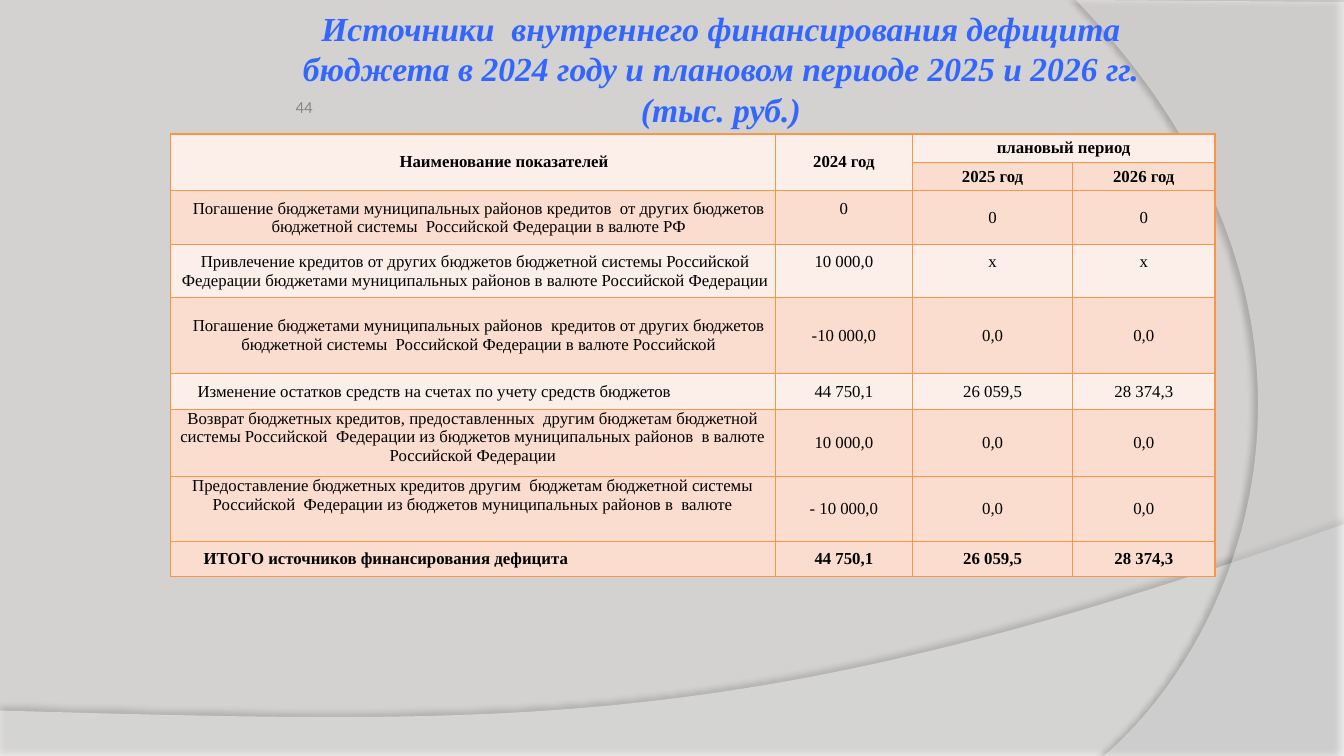
from dataclasses import dataclass
from typing import Optional

from lxml import etree
from pptx import Presentation
from pptx import util as u
from pptx.dml.color import RGBColor
from pptx.enum import text
from pptx.oxml import ns

BACKGROUND = RGBColor(0xD4, 0xD2, 0xD0)
WHITE = RGBColor(0xFF, 0xFF, 0xFF)
BLACK = RGBColor(0, 0, 0)
TITLE_BLUE = RGBColor(0x33, 0x66, 0xFF)
NUMBER_GRAY = RGBColor(0x88, 0x88, 0x88)
LIGHT = RGBColor(0xFC, 0xEE, 0xE9)
DARK = RGBColor(0xFB, 0xDD, 0xCF)
BORDER = RGBColor(0xF7, 0x96, 0x46)
SERIF = "Times New Roman"
CENTER = text.PP_ALIGN.CENTER
MIDDLE = text.MSO_ANCHOR.MIDDLE
CURVE_STEPS = 60

Point = tuple[float, float]


@dataclass
class Wave:
    corners: list[Point]
    curve: tuple[Point, Point, Point, Point]
    opacity: int
    shadow_opacity: int
    shadow_distance: float
    shadow_angle: int


@dataclass
class Row:
    height: float
    values: tuple[str, ...]
    fill: RGBColor
    bold: bool = False
    indent: tuple[float, float] = (0, 0)
    name_align: text.PP_ALIGN = CENTER
    name_anchor: text.MSO_ANCHOR = MIDDLE
    raised: tuple[int, ...] = ()  # columns whose text sits above the middle


WAVES = [
    Wave([(0, 7.5), (13.33, 7.5)],
         ((13.33, 5.2), (7.45, 7.29), (5.21, 7.19), (0, 7.05)), 45, 35, 3.5, 270),
    Wave([(13.33, 0.02), (13.33, 7.5)],
         ((10.95, 7.5), (12.46, 6.19), (13.57, 3), (10.67, 0)), 40, 45, 4, 180),
]
COLUMNS = (6, 1.36, 1.59, 1.41)
ROWS = [
    Row(0.28, ("Наименование показателей", "2024 год", "плановый период", ""),
        LIGHT, bold=True, indent=(0.62, 0)),
    Row(0.28, ("", "", "2025 год", "2026 год"), DARK, bold=True),
    Row(0.54, ("Погашение бюджетами муниципальных районов кредитов  от других бюджетов "
               "бюджетной системы  Российской Федерации в валюте РФ", "0", "0", "0"),
        DARK, indent=(0.12, 0), raised=(1,)),
    Row(0.52, ("Привлечение кредитов от других бюджетов бюджетной системы Российской "
               "Федерации бюджетами муниципальных районов в валюте Российской Федерации",
               "10 000,0", "х", "х"), LIGHT, indent=(0.05, 0), raised=(1, 2, 3)),
    Row(0.76, ("Погашение бюджетами муниципальных районов  кредитов от других бюджетов "
               "бюджетной системы  Российской Федерации в валюте Российской",
               "-10 000,0", "0,0", "0,0"), DARK, indent=(0.12, 0)),
    Row(0.35, ("Изменение остатков средств на счетах по учету средств бюджетов",
               "44 750,1", "26 059,5", "28 374,3"),
        LIGHT, indent=(0.67, -0.4), name_align=text.PP_ALIGN.LEFT),
    Row(0.67, ("Возврат бюджетных кредитов, предоставленных  другим бюджетам бюджетной "
               "системы Российской  Федерации из бюджетов муниципальных районов  в валюте "
               "Российской Федерации", "10 000,0", "0,0", "0,0"),
        DARK, name_anchor=text.MSO_ANCHOR.TOP),
    Row(0.64, ("Предоставление бюджетных кредитов другим  бюджетам бюджетной системы "
               "Российской  Федерации из бюджетов муниципальных районов в  валюте",
               "- 10 000,0", "0,0", "0,0"), DARK, name_anchor=text.MSO_ANCHOR.TOP),
    Row(0.35, ("ИТОГО источников финансирования дефицита",
               "44 750,1", "26 059,5", "28 374,3"),
        DARK, bold=True, indent=(1.27, -0.94), name_align=text.PP_ALIGN.LEFT),
]


def add_element(parent, tag: str, **attributes):
    element = etree.SubElement(parent, ns.qn(tag))
    for name, value in attributes.items():
        element.set(name, str(value))
    return element


def bezier(curve: tuple[Point, Point, Point, Point]) -> list[Point]:
    def at(t: float) -> Point:
        weights = ((1 - t) ** 3, 3 * t * (1 - t) ** 2, 3 * t ** 2 * (1 - t), t ** 3)
        return (sum(w * p[0] for w, p in zip(weights, curve)),
                sum(w * p[1] for w, p in zip(weights, curve)))
    return [at(step / CURVE_STEPS) for step in range(CURVE_STEPS + 1)]


def add_wave(slide, wave: Wave) -> None:
    points = [(u.Inches(x), u.Inches(y)) for x, y in wave.corners + bezier(wave.curve)]
    builder = slide.shapes.build_freeform(*points[0])
    builder.add_line_segments(points[1:], close=True)
    shape = builder.convert_to_shape()
    shape.fill.solid()
    shape.fill.fore_color.rgb = WHITE
    shape.line.fill.background()
    shape.shadow.inherit = False
    properties = shape._element.spPr
    color = properties.find(ns.qn("a:solidFill"))[0]
    add_element(color, "a:alpha", val=wave.opacity * 1000)
    shadow = add_element(properties.find(ns.qn("a:effectLst")), "a:outerShdw",
                         blurRad=u.Pt(4), dist=u.Pt(wave.shadow_distance),
                         dir=wave.shadow_angle * 60000, algn="ctr", rotWithShape=0)
    shadow_color = add_element(shadow, "a:srgbClr", val=BLACK)
    add_element(shadow_color, "a:alpha", val=wave.shadow_opacity * 1000)


def write(frame, words: str, size: float, color: RGBColor, font: str = SERIF,
          align: text.PP_ALIGN = CENTER, bold: bool = False, italic: bool = False,
          indent: tuple[float, float] = (0, 0)) -> None:
    frame.text = words
    paragraph = frame.paragraphs[0]
    paragraph.alignment = align
    properties = paragraph._p.get_or_add_pPr()
    properties.set("marL", str(u.Inches(indent[0])))
    properties.set("indent", str(u.Inches(indent[1])))
    for run in paragraph.runs:
        run.font.name, run.font.size = font, u.Pt(size)
        run.font.bold, run.font.italic = bold, italic
        run.font.color.rgb = color


def add_label(slide, left: float, top: float, width: float, height: float,
              margin: Optional[float] = None):
    box = slide.shapes.add_textbox(*map(u.Inches, (left, top, width, height)))
    frame = box.text_frame
    frame.word_wrap = True
    if margin is not None:
        frame.margin_left = frame.margin_right = u.Inches(margin)
        frame.margin_top = frame.margin_bottom = u.Inches(margin)
    return frame


def format_cell(cell, row: Row, column: int) -> None:
    is_name = column == 0
    cell.margin_left = cell.margin_right = cell.margin_top = 0
    cell.margin_bottom = u.Inches(0.18 if column in row.raised else 0)
    cell.vertical_anchor = row.name_anchor if is_name else MIDDLE
    if row.values[column]:
        write(cell.text_frame, row.values[column], 12, BLACK, bold=row.bold,
              align=row.name_align if is_name else CENTER,
              indent=row.indent if is_name else (0, 0))
    properties = cell._tc.get_or_add_tcPr()
    for side in ("a:lnL", "a:lnR", "a:lnT", "a:lnB"):
        line = add_element(properties, side, w=u.Pt(1))
        add_element(add_element(line, "a:solidFill"), "a:srgbClr", val=BORDER)
    cell.fill.solid()
    cell.fill.fore_color.rgb = row.fill


def add_deficit_table(slide) -> None:
    frame = slide.shapes.add_table(
        len(ROWS), len(COLUMNS), u.Inches(1.69), u.Inches(1.33),
        u.Inches(sum(COLUMNS)), u.Inches(sum(row.height for row in ROWS)))
    table = frame.table
    table.first_row = table.horz_banding = False
    for column, width in zip(table.columns, COLUMNS):
        column.width = u.Inches(width)
    for index, row in enumerate(ROWS):
        table.rows[index].height = u.Inches(row.height)
        for column in range(len(COLUMNS)):
            format_cell(table.cell(index, column), row, column)
    for first, last in (((0, 0), (1, 0)), ((0, 1), (1, 1)), ((0, 2), (0, 3))):
        table.cell(*first).merge(table.cell(*last))


def main() -> None:
    presentation = Presentation()
    presentation.slide_width, presentation.slide_height = u.Inches(13.33), u.Inches(7.5)
    slide = presentation.slides.add_slide(presentation.slide_layouts[6])
    slide.background.fill.solid()
    slide.background.fill.fore_color.rgb = BACKGROUND
    for wave in WAVES:
        add_wave(slide, wave)
    number = add_label(slide, 2.25, 0.96, 0.85, 0.2, margin=0)
    number.vertical_anchor = MIDDLE
    write(number, "44", 12, NUMBER_GRAY, font="Calibri", align=text.PP_ALIGN.RIGHT,
          indent=(0.03, 0))
    title = add_label(slide, 2.65, 0.03, 9, 1.07)
    write(title, "Источники  внутреннего финансирования дефицита бюджета в 2024 году "
          "и плановом периоде 2025 и 2026 гг. (тыс. руб.)", 24, TITLE_BLUE,
          bold=True, italic=True)
    add_deficit_table(slide)
    presentation.save("out.pptx")


if __name__ == "__main__":
    main()
